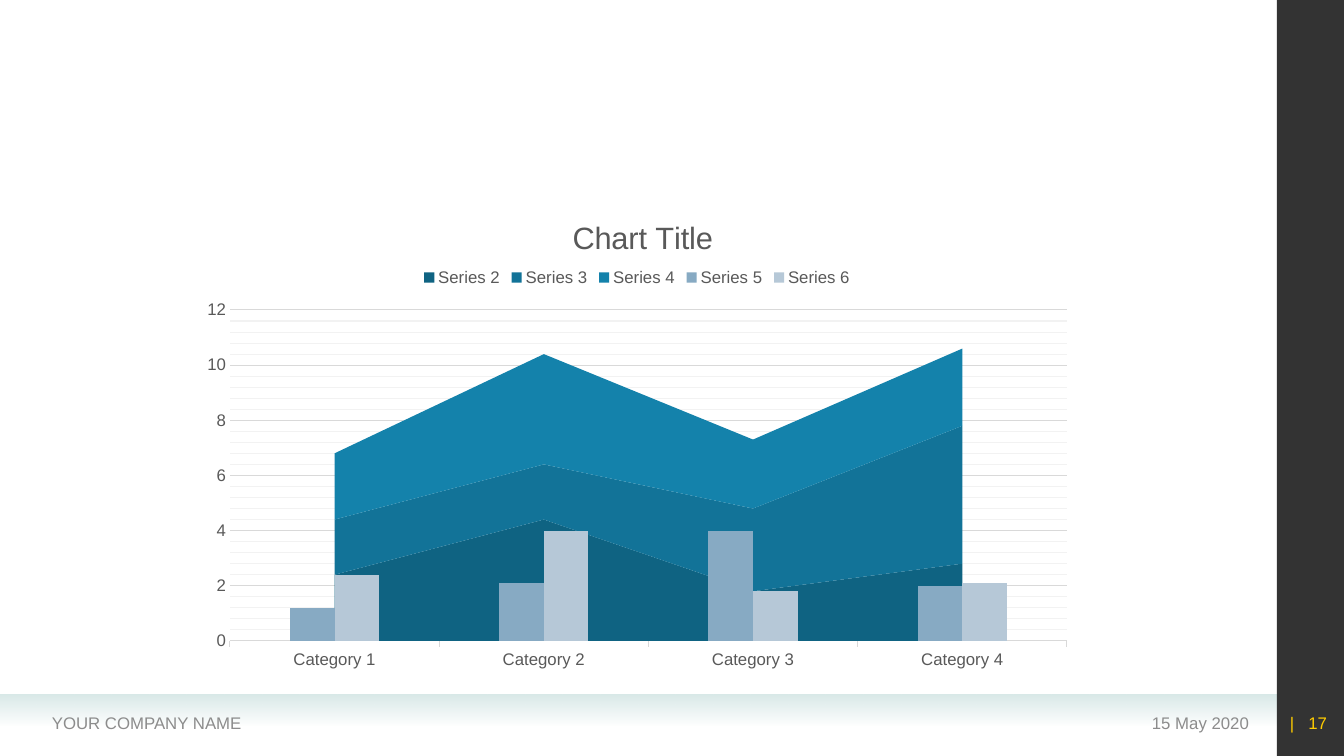
from lxml import etree
from pptx import Presentation
from pptx.chart.data import CategoryChartData
from pptx.dml.color import RGBColor
from pptx.enum.chart import XL_CHART_TYPE as ChartType
from pptx.enum.chart import XL_LEGEND_POSITION as LegendPosition
from pptx.enum.chart import XL_TICK_MARK as TickMark
from pptx.enum.shapes import MSO_SHAPE as Preset
from pptx.enum.text import MSO_ANCHOR as Anchor
from pptx.enum.text import PP_ALIGN as Align
from pptx.oxml import parse_xml
from pptx.oxml.ns import nsdecls, qn
from pptx.util import Emu, Pt

EMU_PER_PX = 914400 / 100.8
SLIDE_W, SLIDE_H = 1344, 756
SIDEBAR_W = 67
FONT = "Arial"

BLACK = RGBColor(0x00, 0x00, 0x00)
MINT = RGBColor(0xD9, 0xE9, 0xE8)
YELLOW = RGBColor(0xFF, 0xCC, 0x00)
FOOTER_GREY = RGBColor(0x8C, 0x8C, 0x8C)
LABEL_GREY = RGBColor(0x59, 0x59, 0x59)
MAJOR_GREY = RGBColor(0xD9, 0xD9, 0xD9)
MINOR_GREY = RGBColor(0xF2, 0xF2, 0xF2)

CATEGORIES = ["Category 1", "Category 2", "Category 3", "Category 4"]
SERIES = [
    ("Series 2", (2.4, 4.4, 1.8, 2.8), RGBColor(0x0F, 0x63, 0x82)),
    ("Series 3", (2, 2, 3, 5), RGBColor(0x12, 0x73, 0x98)),
    ("Series 4", (2.4, 4, 2.5, 2.8), RGBColor(0x14, 0x82, 0xAB)),
    ("Series 5", (1.2, 2.1, 4, 2), RGBColor(0x87, 0xAA, 0xC3)),
    ("Series 6", (2.4, 4, 1.8, 2.1), RGBColor(0xB6, 0xC8, 0xD7)),
]
AREA_COUNT = 3  # the remaining series are columns


def px(length):
    return Emu(round(length * EMU_PER_PX))


def place(box):
    return [px(length) for length in box]


def style_font(font, size, color):
    font.name = FONT
    font.size = Pt(size)
    font.bold = False
    font.color.rgb = color


def set_opacity(color_xml, percent):
    etree.SubElement(color_xml, qn("a:alpha"), val=str(percent * 1000))


def add_panel(slide, box):
    panel = slide.shapes.add_shape(Preset.RECTANGLE, *place(box))
    panel.shadow.inherit = False
    panel.line.fill.background()
    return panel


def add_label(slide, box, text, color, align):
    frame = slide.shapes.add_textbox(*place(box)).text_frame
    frame.word_wrap = True
    frame.vertical_anchor = Anchor.MIDDLE
    frame.text = text
    paragraph = frame.paragraphs[0]
    paragraph.alignment = align
    style_font(paragraph.runs[0].font, 12, color)


def add_footer(slide, box):
    left, top, width, height = box
    # Band fading out downwards
    band = add_panel(slide, (left, top, width, 31))
    band.fill.gradient()
    band.fill.gradient_angle = 270
    for stop, position in zip(band.fill.gradient_stops, (0, 1)):
        stop.color.rgb = MINT
        stop.position = position
    colors = list(band._element.spPr.iter(qn("a:srgbClr")))
    set_opacity(colors[-1], 0)
    # Company and date
    label_top = top + height - 53
    add_label(slide, (left + 42, label_top, 494, 40), "YOUR COMPANY NAME",
              FOOTER_GREY, Align.LEFT)
    add_label(slide, (left + width - 360, label_top, 342, 40), "15 May 2020",
              FOOTER_GREY, Align.RIGHT)


def add_sidebar(slide, box):
    left, top, width, height = box
    bar = add_panel(slide, box)
    bar.fill.solid()
    bar.fill.fore_color.rgb = BLACK
    set_opacity(next(bar._element.spPr.iter(qn("a:srgbClr"))), 80)
    add_label(slide, (left - 7, top + height - 53, width, 40), "|   17",
              YELLOW, Align.RIGHT)


def set_layout(parent, before, box, chart_size, inner=False):
    """Fix a chart part in px measured from the chart's corner."""
    for old in parent.findall(qn("c:layout")):
        parent.remove(old)
    fractions = zip("xywh", box, chart_size * 2)
    target = '<c:layoutTarget val="inner"/>' if inner else ""
    modes = "".join(f'<c:{key}Mode val="edge"/>' for key in "xy")
    values = "".join(f'<c:{key} val="{length / whole:.4f}"/>'
                     for key, length, whole in fractions)
    layout = parse_xml(f'<c:layout {nsdecls("c")}><c:manualLayout>{target}'
                       f'{modes}{values}</c:manualLayout></c:layout>')
    parent.find(qn(before)).addprevious(layout)


def move_to_columns(chart):
    """Turn the series after the areas into clustered columns."""
    area = chart._chartSpace.find(".//" + qn("c:areaChart"))
    columns = parse_xml(f'<c:barChart {nsdecls("c")}><c:barDir val="col"/>'
                        '<c:grouping val="clustered"/><c:varyColors val="0"/>'
                        '<c:gapWidth val="269"/></c:barChart>')
    gap = columns.find(qn("c:gapWidth"))
    for series in area.findall(qn("c:ser"))[AREA_COUNT:]:
        gap.addprevious(series)
    for axis in area.findall(qn("c:axId")):
        etree.SubElement(columns, qn("c:axId"), val=axis.get("val"))
    area.addnext(columns)


def style_axes(chart):
    category, value = chart.category_axis, chart.value_axis
    for axis in (category, value):
        style_font(axis.tick_labels.font, 12, LABEL_GREY)
        axis.minor_tick_mark = TickMark.NONE
    category.major_tick_mark = TickMark.OUTSIDE
    category.has_major_gridlines = False
    value.major_tick_mark = TickMark.NONE
    value.minimum_scale, value.maximum_scale = 0, 12
    value.major_unit, value.minor_unit = 2, 0.4
    value.has_major_gridlines = value.has_minor_gridlines = True
    value.format.line.fill.background()
    for line in (category.format.line, value.major_gridlines.format.line):
        line.width = Pt(0.75)
        line.color.rgb = MAJOR_GREY
    # Minor gridlines and axis crossing are set in XML
    value._element.find(qn("c:minorGridlines")).append(parse_xml(
        f'<c:spPr {nsdecls("c", "a")}><a:ln w="{Pt(0.75)}"><a:solidFill>'
        f'<a:srgbClr val="{MINOR_GREY}"/></a:solidFill></a:ln></c:spPr>'))
    value._element.find(qn("c:crossBetween")).set("val", "between")


def add_combined_chart(slide, box):
    data = CategoryChartData()
    data.categories = CATEGORIES
    for name, values, _ in SERIES:
        data.add_series(name, values)
    chart = slide.shapes.add_chart(ChartType.AREA_STACKED, *place(box), data).chart
    style_font(chart.font, 10, BLACK)
    for series, (_, _, color) in zip(chart.plots[0].series, SERIES):
        series.format.fill.solid()
        series.format.fill.fore_color.rgb = color
    chart.plots[0].vary_by_categories = False
    move_to_columns(chart)
    style_axes(chart)

    # Title and legend
    chart.has_title = True
    heading = chart.chart_title.text_frame
    heading.text = "Chart Title"
    style_font(heading.paragraphs[0].runs[0].font, 22, LABEL_GREY)
    chart.has_legend = True
    chart.legend.position = LegendPosition.TOP
    chart.legend.include_in_layout = False
    style_font(chart.legend.font, 12, LABEL_GREY)

    # Fixed positions
    size = box[2:]
    set_layout(chart.chart_title._element, "c:overlay", (377, 22), size)
    set_layout(chart.legend._element, "c:overlay", (228, 73, 438, 27), size)
    plot_area = chart._chartSpace.find(".//" + qn("c:plotArea"))
    set_layout(plot_area, "c:areaChart", (40, 119, 837, 331), size, inner=True)


def main():
    deck = Presentation()
    deck.slide_width, deck.slide_height = px(SLIDE_W), px(SLIDE_H)
    slide = deck.slides.add_slide(deck.slide_layouts[6])
    content_w = SLIDE_W - SIDEBAR_W
    add_footer(slide, (0, 695, content_w, SLIDE_H - 695))
    add_sidebar(slide, (content_w, 0, SIDEBAR_W, SLIDE_H))
    add_combined_chart(slide, (190, 191, 896, 488))
    deck.save("out.pptx")


if __name__ == "__main__":
    main()
